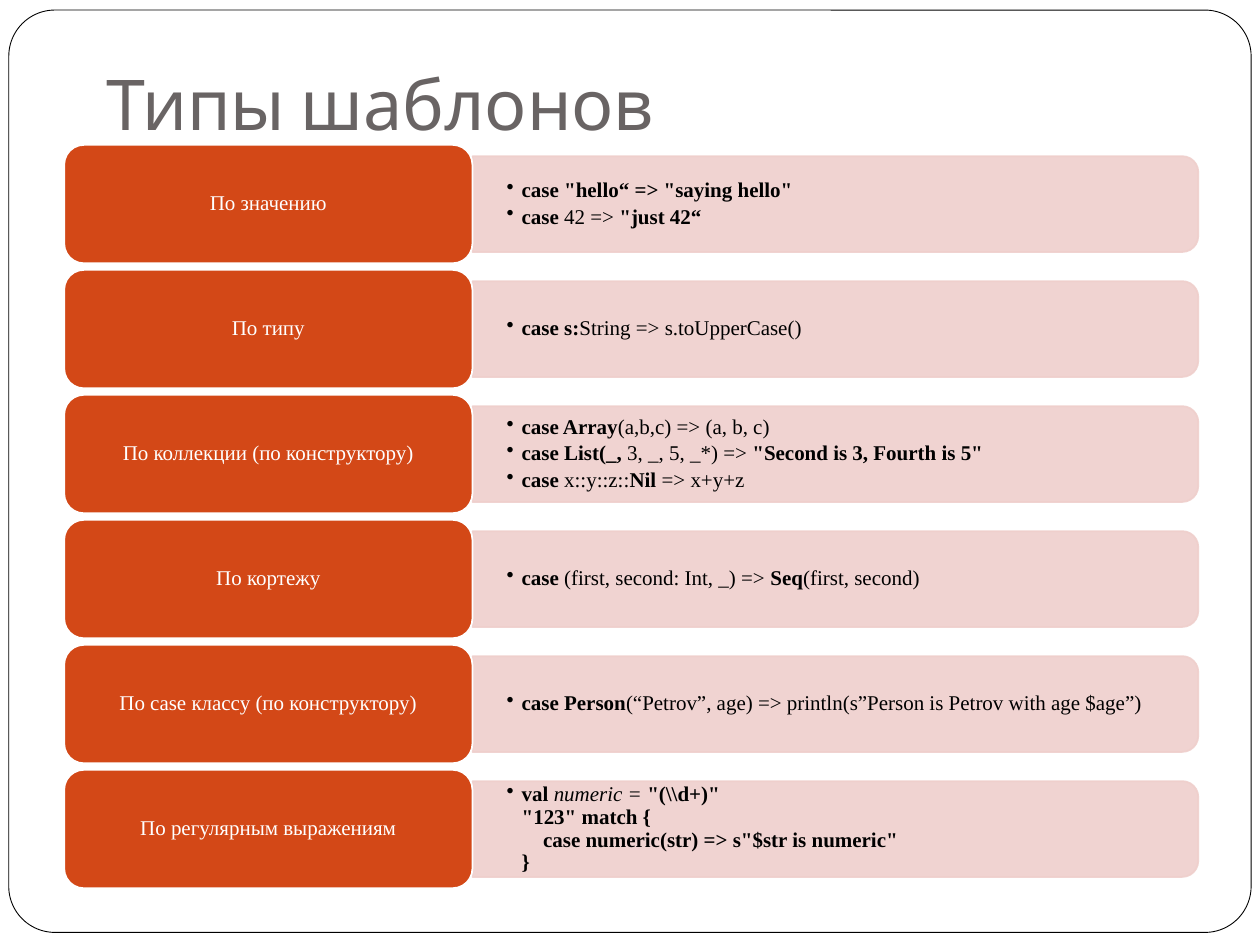
from dataclasses import dataclass

from lxml.etree import SubElement
from pptx import Presentation
from pptx.dml.color import RGBColor
from pptx.enum.shapes import MSO_SHAPE
from pptx.enum.text import MSO_ANCHOR, PP_ALIGN
from pptx.oxml.ns import qn
from pptx.util import Inches, Pt

COLORS = {
    "paper": "FFFFFF",
    "ink": "000000",
    "title": "696464",
    "label": "D34817",
    "bar": "EFCFCC",
}
COLUMNS, ROWS = 100, 75
FIRST_ROW, ROW_STEP = 11.5, 9.92
LABEL_LEFT, LABEL_WIDTH, LABEL_HEIGHT = 5.1, 32.4, 9.4
BAR_WIDTH, BAR_HEIGHT, EXAMPLE_WIDTH, EXAMPLE_HEIGHT = 57.6, 7.6, 57.2, 6.8


@dataclass
class Code:
    runs: list
    indent: float = 0.12
    bullet: bool = True
    gap: float = 2


def bold(text):
    return text, True, False


def plain(text):
    return text, False, False


def italic(text):
    return text, False, True


PATTERNS = [
    ("По значению", [
        Code([bold('case "hello“ => "saying hello"')]),
        Code([bold("case "), plain("42 => "), bold('"just 42“')]),
    ]),
    ("По типу", [
        Code([bold("case s:"), plain("String => s.toUpperCase()")]),
    ]),
    ("По коллекции (по конструктору)", [
        Code([bold("case Array"), plain("(a,b,c) => (a, b, c)")]),
        Code([bold("case List(_, "), plain("3, _, 5, _*) => "),
              bold('"Second is 3, Fourth is 5"')]),
        Code([bold("case"), plain(" x::y::z::"), bold("Nil"), plain(" => x+y+z")]),
    ]),
    ("По кортежу", [
        Code([bold("case "), plain("(first, second: Int, _) => "),
              bold("Seq"), plain("(first, second)")]),
    ]),
    ("По case классу (по конструктору)", [
        Code([bold("case Person"),
              plain("(“Petrov”, age) => println(s”Person is Petrov with age $age”)")]),
    ]),
    ("По регулярным выражениям", [
        Code([bold("val "), italic("numeric = "), bold(r'"(\\d+)"')], gap=0),
        Code([bold('"123" match {')], bullet=False, gap=0),
        Code([bold('case numeric(str) => s"$str is numeric"')], 0.29, False, 0),
        Code([bold("}")], bullet=False),
    ]),
]


class PatternSlide:
    """Draws the pattern overview on a grid of columns and rows."""

    def __init__(self, deck):
        self.slide = deck.slides.add_slide(deck.slide_layouts[6])
        self.column = deck.slide_width / COLUMNS
        self.row = deck.slide_height / ROWS

    def place(self, left, top, width, height):
        return (round(left * self.column), round(top * self.row),
                round(width * self.column), round(height * self.row))

    def color(self, name):
        return RGBColor.from_string(COLORS[name])

    def style(self, paragraph, font, size, color):
        paragraph.font.name = font
        paragraph.font.size = Pt(size)
        paragraph.font.color.rgb = self.color(color)

    def frame(self, shape, anchor, left, top, right, bottom):
        text = shape.text_frame
        text.word_wrap = True
        text.vertical_anchor = anchor
        text.margin_left, text.margin_top = Inches(left), Inches(top)
        text.margin_right, text.margin_bottom = Inches(right), Inches(bottom)
        return text

    def panel(self, preset, box, fill, line, width):
        panel = self.slide.shapes.add_shape(preset, *self.place(*box))
        panel.shadow.inherit = False
        panel.fill.solid()
        panel.fill.fore_color.rgb = self.color(fill)
        panel.line.color.rgb = self.color(line)
        panel.line.width = Pt(width)
        return panel

    def border(self):
        border = self.panel(MSO_SHAPE.ROUNDED_RECTANGLE, (0.7, 0.8, 98.6, 73.2),
                            "paper", "ink", 0.5)
        border.adjustments[0] = 0.05

    def title(self, words):
        box = self.slide.shapes.add_textbox(*self.place(7.5, 0, 85, 12.5))
        heading = self.frame(box, MSO_ANCHOR.BOTTOM, 0.1, 0.05, 0.1, 0.1).paragraphs[0]
        heading.text = words
        self.style(heading, "Cabin", 40, "title")

    def bar(self, left, middle):
        center = left + BAR_WIDTH / 2
        bar = self.panel(MSO_SHAPE.ROUND_2_SAME_RECTANGLE,
                         (center - BAR_HEIGHT / 2, middle - BAR_WIDTH / 2,
                          BAR_HEIGHT, BAR_WIDTH), "bar", "bar", 1)
        bar.rotation = 90
        for tint in bar._element.spPr.iter(qn("a:srgbClr")):
            SubElement(tint, qn("a:alpha"), val="90000")

    def examples(self, left, middle, lines):
        box = self.slide.shapes.add_textbox(*self.place(
            left, middle - EXAMPLE_HEIGHT / 2, EXAMPLE_WIDTH, EXAMPLE_HEIGHT))
        text = self.frame(box, MSO_ANCHOR.MIDDLE, 0.27, 0.14, 0.27, 0.14)
        for index, line in enumerate(lines):
            paragraph = text.add_paragraph() if index else text.paragraphs[0]
            paragraph.level = 1
            paragraph.line_spacing = 0.9
            paragraph.space_after = Pt(line.gap)
            self.style(paragraph, "Times New Roman", 12, "ink")
            self.bullet(paragraph, line)
            for words, is_bold, is_italic in line.runs:
                run = paragraph.add_run()
                run.text = words
                run.font.bold = is_bold
                run.font.italic = is_italic

    def bullet(self, paragraph, line):
        properties = paragraph._p.get_or_add_pPr()
        properties.set("marL", str(Inches(line.indent)))
        properties.set("indent", str(-Inches(line.indent) if line.bullet else 0))
        mark = SubElement(properties, qn("a:buChar" if line.bullet else "a:buNone"))
        if line.bullet:
            mark.set("char", "•")
        properties.find(qn("a:defRPr")).addprevious(mark)

    def label(self, top, words):
        label = self.panel(MSO_SHAPE.ROUNDED_RECTANGLE,
                           (LABEL_LEFT, top, LABEL_WIDTH, LABEL_HEIGHT),
                           "label", "paper", 1)
        name = self.frame(label, MSO_ANCHOR.MIDDLE, 0.05, 0.03, 0.05, 0.03).paragraphs[0]
        name.text = words
        name.alignment = PP_ALIGN.CENTER
        name.line_spacing = 0.9
        self.style(name, "Times New Roman", 12, "paper")

    def pattern(self, index, words, lines):
        top = FIRST_ROW + index * ROW_STEP
        middle = top + LABEL_HEIGHT / 2
        left = LABEL_LEFT + LABEL_WIDTH
        self.bar(left, middle)
        self.examples(left, middle, lines)
        self.label(top, words)


def main():
    deck = Presentation()
    deck.slide_width, deck.slide_height = Inches(10), Inches(7.5)
    overview = PatternSlide(deck)
    overview.border()
    overview.title("Типы шаблонов")
    for index, (words, lines) in enumerate(PATTERNS):
        overview.pattern(index, words, lines)
    deck.save("out.pptx")


if __name__ == "__main__":
    main()
